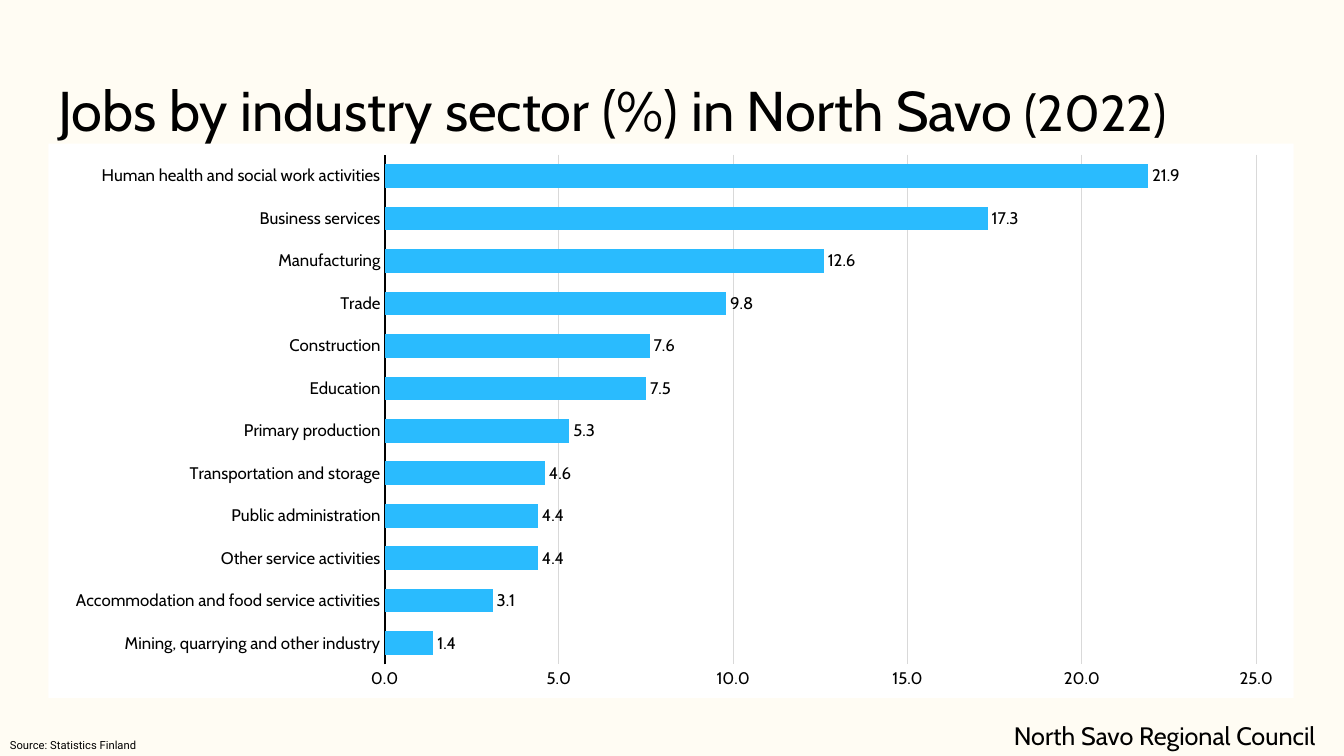
from lxml import etree
from pptx import Presentation
from pptx import util as u
from pptx.chart.data import CategoryChartData
from pptx.dml.color import RGBColor
from pptx.enum import chart as ch, text
from pptx.oxml import ns, parse_xml

deck = Presentation()
deck.slide_width, deck.slide_height = u.Inches(13.33), u.Inches(7.5)
wide, high = deck.slide_width, deck.slide_height
slide = deck.slides.add_slide(deck.slide_layouts[6])


def paint(spot, tint):
    if hasattr(spot, "solid"):
        spot.solid()
        spot = spot.fore_color
    spot.rgb = RGBColor.from_string(tint)


def style(font, size, face="Cabin"):
    font.size, font.name, font.bold = u.Pt(size), face, False
    paint(font.color, "000000")


paint(slide.background.fill, "FFFCF3")

left, span = wide * 0.036, wide * 0.9265
labels = [
    (left, high * 0.053, span, high * 0.193, "Cabin",
     [("Jobs by industry sector (%) in North Savo ", 40), ("(2022)", 36)]),
    (0, high * 0.97, span, high * 0.03, "Roboto",
     [("Source: Statistics Finland", 8)]),
    (wide * 0.747, high * 0.946, wide * 0.253, high * 0.054, "Cabin",
     [("North Savo Regional Council", 18)]),
]
for x, y, w, h, face, runs in labels:
    frame = slide.shapes.add_textbox(*map(int, (x, y, w, h))).text_frame
    frame.word_wrap = True
    for words, size in runs:
        run = frame.paragraphs[0].add_run()
        run.text = words
        style(run.font, size, face)
    if len(runs) > 1:
        frame.vertical_anchor = text.MSO_ANCHOR.MIDDLE
        frame.paragraphs[0].line_spacing = 0.9

jobs = [
    ("Mining, quarrying and other industry", 1.4),
    ("Accommodation and food service activities", 3.1),
    ("Other service activities", 4.4),
    ("Public administration", 4.4),
    ("Transportation and storage", 4.6),
    ("Primary production", 5.3),
    ("Education", 7.5),
    ("Construction", 7.6),
    ("Trade", 9.8),
    ("Manufacturing", 12.6),
    ("Business services", 17.3),
    ("Human health and social work activities", 21.9),
]
data = CategoryChartData(number_format="0.0")
data.categories = [name for name, share in jobs]
data.add_series("Series 1", [share for name, share in jobs])
box = map(int, (left, high * 0.19, span, high * 0.733))
chart = slide.shapes.add_chart(ch.XL_CHART_TYPE.BAR_CLUSTERED, *box, data).chart
chart.has_legend = chart.has_title = False
style(chart.font, 10)

plot = chart.plots[0]
plot.gap_width = 80
plot.vary_by_categories = False
paint(plot.series[0].format.fill, "2ABBFE")
plot.has_data_labels = True
marks = plot.data_labels
marks.show_value = True
marks.position = ch.XL_LABEL_POSITION.OUTSIDE_END
marks.number_format, marks.number_format_is_linked = "0.0", False
style(marks.font, 12)

cats, vals = chart.category_axis, chart.value_axis
for axis in (cats, vals):
    axis.major_tick_mark = axis.minor_tick_mark = ch.XL_TICK_MARK.NONE
    style(axis.tick_labels.font, 12)
cats.format.line.width = u.Pt(1.5)
paint(cats.format.line.fill, "000000")
vals.format.line.fill.background()
vals.minimum_scale, vals.maximum_scale, vals.major_unit = 0, 25, 5
vals.tick_labels.number_format = "0.0"
vals.tick_labels.number_format_is_linked = False
vals.has_major_gridlines = True
grid = vals.major_gridlines.format.line
grid.width = u.Pt(0.75)
paint(grid.fill, "D9D9D9")

root = chart.element
body = root.find(ns.qn("c:chart"))
body.addnext(parse_xml(
    f'<c:spPr {ns.nsdecls("c", "a")}><a:solidFill><a:srgbClr val="FFFFFF"/>'
    '</a:solidFill><a:ln><a:noFill/></a:ln></c:spPr>'))
area = body.find(ns.qn("c:plotArea"))
for old in area.findall(ns.qn("c:layout")):
    area.remove(old)
place = etree.Element(ns.qn("c:layout"))
area.insert(0, place)
hand = etree.SubElement(place, ns.qn("c:manualLayout"))
rules = [("layoutTarget", "inner"), ("xMode", "edge"), ("yMode", "edge"),
         ("x", "0.27"), ("y", "0.02"), ("w", "0.7"), ("h", "0.92")]
for key, val in rules:
    etree.SubElement(hand, ns.qn("c:" + key)).set("val", val)

deck.save("out.pptx")
